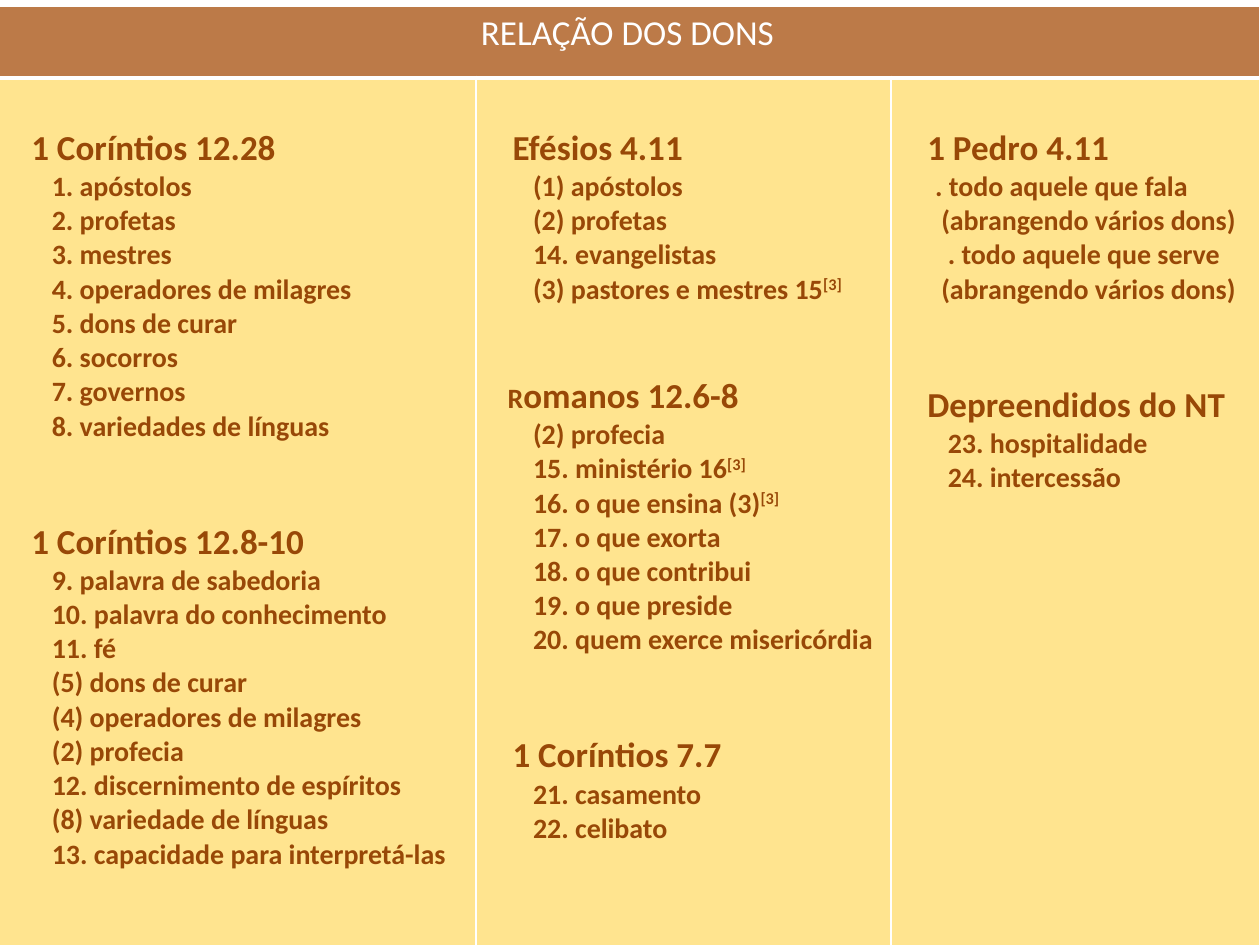
from lxml import etree
from pptx import Presentation
from pptx.dml.color import RGBColor
from pptx.enum.text import PP_ALIGN
from pptx.oxml.ns import qn
from pptx.util import Pt

CENTER = PP_ALIGN.CENTER
FONT = "Calibri"
WHITE = RGBColor(0xFF, 0xFF, 0xFF)
BROWN = RGBColor(0x98, 0x48, 0x07)
COPPER = RGBColor(0xBC, 0x7A, 0x48)
CREAM = RGBColor(0xFF, 0xE4, 0x8F)

HEADING_SIZE, ITEM_SIZE = 20, 16
HEADING_INDENT, ITEM_INDENT, WRAP_INDENT = 13.6, 25.3, 21.6
SECTION_GAP = 44
NOTE = "[3]"
TITLE = "RELAÇÃO DOS DONS"
ROMANS = "Romanos 12.6-8"

COLUMN_WIDTHS = (275, 237, 211)
ROW_HEIGHTS = (41, 509)

# One list per column; each section is a heading and its items.
COLUMNS = [
    [
        ("1 Coríntios 12.28", [
            "1. apóstolos", "2. profetas", "3. mestres",
            "4. operadores de milagres", "5. dons de curar", "6. socorros",
            "7. governos", "8. variedades de línguas"]),
        ("1 Coríntios 12.8-10", [
            "9. palavra de sabedoria", "10. palavra do conhecimento", "11. fé",
            "(5) dons de curar", "(4) operadores de milagres", "(2) profecia",
            "12. discernimento de espíritos", "(8) variedade de línguas",
            "13. capacidade para interpretá-las"]),
    ],
    [
        ("Efésios 4.11", [
            "(1) apóstolos", "(2) profetas", "14. evangelistas",
            "(3) pastores e mestres 15[3]"]),
        (ROMANS, [
            "(2) profecia", "15. ministério 16[3]", "16. o que ensina (3)[3]",
            "17. o que exorta", "18. o que contribui", "19. o que preside",
            "20. quem exerce misericórdia"]),
        ("1 Coríntios 7.7", ["21. casamento", "22. celibato"]),
    ],
    [
        ("1 Pedro 4.11", [
            ". todo aquele que fala (abrangendo vários dons)",
            ". todo aquele que serve (abrangendo vários dons)"]),
        ("Depreendidos do NT", ["23. hospitalidade", "24. intercessão"]),
    ],
]


def add_run(p, text, size, color, bold):
    r = p.add_run()
    r.text = text
    r.font.name = FONT
    r.font.size = Pt(size)
    r.font.bold = bold
    r.font.color.rgb = color
    return r


def add_text(tf, text, *, size=ITEM_SIZE, color=BROWN, bold=True, align=None,
             left=0, first=0, before=0, initial_size=None):
    """Add a paragraph; a trailing note mark is raised, and the initial may differ in size."""
    p = tf.paragraphs[0]
    if p.runs:
        p = tf.add_paragraph()
    p.alignment = align
    if before:
        p.space_before = Pt(before)
    pPr = p._p.get_or_add_pPr()
    pPr.set("marL", str(Pt(left)))
    pPr.set("indent", str(Pt(first)))
    if initial_size:
        add_run(p, text[0], initial_size, color, bold)
        text = text[1:]
    add_run(p, text.removesuffix(NOTE), size, color, bold)
    if text.endswith(NOTE):
        note = add_run(p, NOTE, size, color, bold)
        note._r.get_or_add_rPr().set("baseline", "30000")


def format_cell(cell, color, bottom=1):
    """Fill the cell and give it white borders, with the bottom width in points."""
    tcPr = cell._tc.get_or_add_tcPr()
    for side, width in (("L", 1), ("R", 1), ("T", 1), ("B", bottom)):
        ln = etree.SubElement(tcPr, qn(f"a:ln{side}"), w=str(Pt(width)))
        fill = etree.SubElement(ln, qn("a:solidFill"))
        etree.SubElement(fill, qn("a:srgbClr"), val=str(WHITE))
    cell.fill.solid()
    cell.fill.fore_color.rgb = color


def add_section(tf, heading, items, gap):
    if heading == ROMANS:
        add_text(tf, heading, size=HEADING_SIZE, left=10.8, before=gap - 5,
                 initial_size=ITEM_SIZE)
    else:
        add_text(tf, heading, size=HEADING_SIZE, left=HEADING_INDENT, before=gap)
    for i, item in enumerate(items):
        if item.startswith("."):
            add_text(tf, item, left=WRAP_INDENT, first=(-3.5, 3.7)[i])
        else:
            add_text(tf, item, left=ITEM_INDENT)


def add_gifts_table(s):
    shape = s.shapes.add_table(2, len(COLUMNS), Pt(-2.9), Pt(3.6),
                               Pt(sum(COLUMN_WIDTHS)), Pt(sum(ROW_HEIGHTS)))
    table = shape.table
    for column, width in zip(table.columns, COLUMN_WIDTHS):
        column.width = Pt(width)
    for row, height in zip(table.rows, ROW_HEIGHTS):
        row.height = Pt(height)

    for cell in table.rows[0].cells:
        format_cell(cell, COPPER, bottom=3)
    header = table.cell(0, 0)
    header.merge(table.cell(0, len(COLUMNS) - 1))
    add_text(header.text_frame, TITLE, size=HEADING_SIZE, color=WHITE,
             bold=False, align=CENTER)

    for cell, sections in zip(table.rows[1].cells, COLUMNS):
        format_cell(cell, CREAM)
        cell.margin_top = Pt(28)
        for i, (heading, items) in enumerate(sections):
            add_section(cell.text_frame, heading, items, SECTION_GAP if i else 0)


def main():
    prs = Presentation()
    prs.slide_width, prs.slide_height = Pt(720), Pt(540)
    s = prs.slides.add_slide(prs.slide_layouts[6])
    add_gifts_table(s)
    prs.save("out.pptx")


if __name__ == "__main__":
    main()
